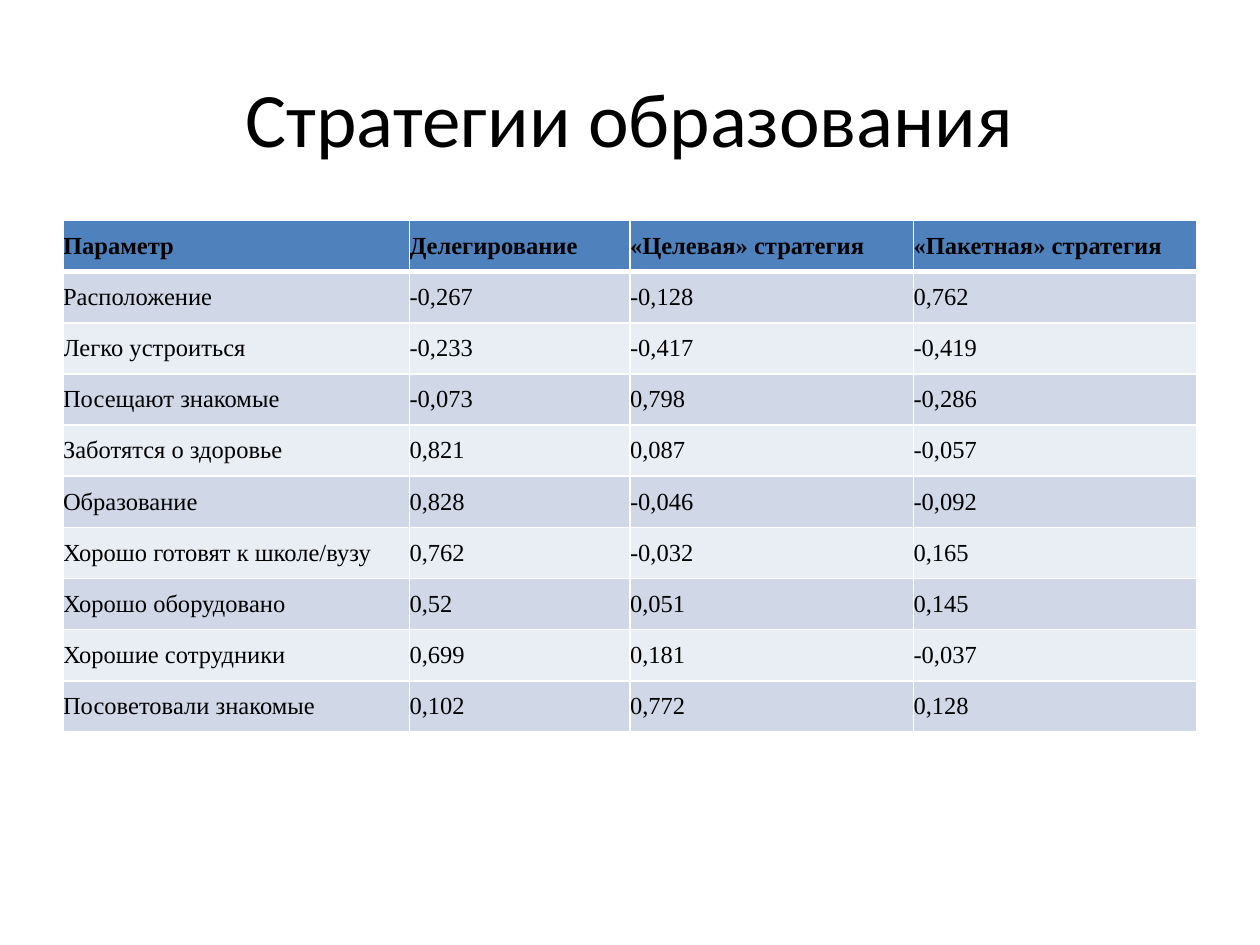
from dataclasses import dataclass

from lxml.etree import SubElement
from pptx import Presentation
from pptx.dml.color import RGBColor
from pptx.enum.text import MSO_ANCHOR as Anchor, PP_ALIGN as Align
from pptx.oxml.ns import qn
from pptx.util import Inches, Pt


@dataclass(frozen=True)
class Theme:
    text: str = "000000"
    header: str = "4F81BD"
    bands: tuple = ("D0D8E8", "E9EDF4")
    rule: str = "FFFFFF"
    thin_rule: int = 1
    header_rule: int = 3
    title_font: str = "Calibri"
    table_font: str = "Times New Roman"
    title_size: int = 44
    table_size: int = 14


THEME = Theme()

HEADINGS = ("Параметр", "Делегирование", "«Целевая» стратегия", "«Пакетная» стратегия")
LOADINGS = (
    ("Расположение", "-0,267", "-0,128", "0,762"),
    ("Легко устроиться", "-0,233", "-0,417", "-0,419"),
    ("Посещают знакомые", "-0,073", "0,798", "-0,286"),
    ("Заботятся о здоровье", "0,821", "0,087", "-0,057"),
    ("Образование", "0,828", "-0,046", "-0,092"),
    ("Хорошо готовят к школе/вузу", "0,762", "-0,032", "0,165"),
    ("Хорошо оборудовано", "0,52", "0,051", "0,145"),
    ("Хорошие сотрудники", "0,699", "0,181", "-0,037"),
    ("Посоветовали знакомые", "0,102", "0,772", "0,128"),
)
COLUMN_SHARES = (11, 7, 9, 9)


def style_paragraph(paragraph, font_name, size, align, bold=False):
    paragraph.alignment = align
    font = paragraph.font
    font.name, font.size, font.bold = font_name, Pt(size), bold
    font.color.rgb = RGBColor.from_string(THEME.text)


def add_title(slide, text, left, top, width, height):
    frame = slide.shapes.add_textbox(left, top, width, height).text_frame
    frame.word_wrap = True
    frame.vertical_anchor = Anchor.MIDDLE
    frame.text = text
    style_paragraph(frame.paragraphs[0], THEME.title_font, THEME.title_size, Align.CENTER)


def set_borders(cell, top, bottom):
    """Rule all four sides; must run before the fill is set, as the schema orders them."""
    properties = cell._tc.get_or_add_tcPr()
    thin = THEME.thin_rule
    for side, points in (("L", thin), ("R", thin), ("T", top), ("B", bottom)):
        line = SubElement(properties, qn(f"a:ln{side}"), w=str(Pt(points)))
        fill = SubElement(line, qn("a:solidFill"))
        SubElement(fill, qn("a:srgbClr"), val=THEME.rule)


def fill_cell(cell, text, row, column):
    is_header = row == 0
    set_borders(
        cell,
        top=THEME.header_rule if row == 1 else THEME.thin_rule,
        bottom=THEME.header_rule if is_header else THEME.thin_rule,
    )
    color = THEME.header if is_header else THEME.bands[(row - 1) % 2]
    cell.fill.solid()
    cell.fill.fore_color.rgb = RGBColor.from_string(color)
    cell.margin_left = cell.margin_right = cell.margin_top = cell.margin_bottom = 0
    cell.vertical_anchor = Anchor.MIDDLE
    cell.text = text
    align = Align.LEFT if column == 0 and not is_header else Align.JUSTIFY
    style_paragraph(cell.text_frame.paragraphs[0], THEME.table_font, THEME.table_size,
                    align, bold=is_header)


def add_loadings_table(slide, left, top, width, height):
    rows = (HEADINGS, *LOADINGS)
    table = slide.shapes.add_table(
        len(rows), len(HEADINGS), left, top, width, height).table
    for column, share in zip(table.columns, COLUMN_SHARES):
        column.width = width * share // sum(COLUMN_SHARES)
    for r, texts in enumerate(rows):
        for c, text in enumerate(texts):
            fill_cell(table.cell(r, c), text, r, c)


def main():
    deck = Presentation()
    deck.slide_width, deck.slide_height = Inches(10), Inches(7.5)
    slide = deck.slides.add_slide(deck.slide_layouts[6])
    margin = Inches(0.5)
    content_width = deck.slide_width - 2 * margin
    add_title(slide, "Стратегии образования", margin, Inches(0.3), content_width, Inches(1.25))
    add_loadings_table(slide, margin, Inches(1.75), content_width, Inches(4.06))
    deck.save("out.pptx")


if __name__ == "__main__":
    main()
